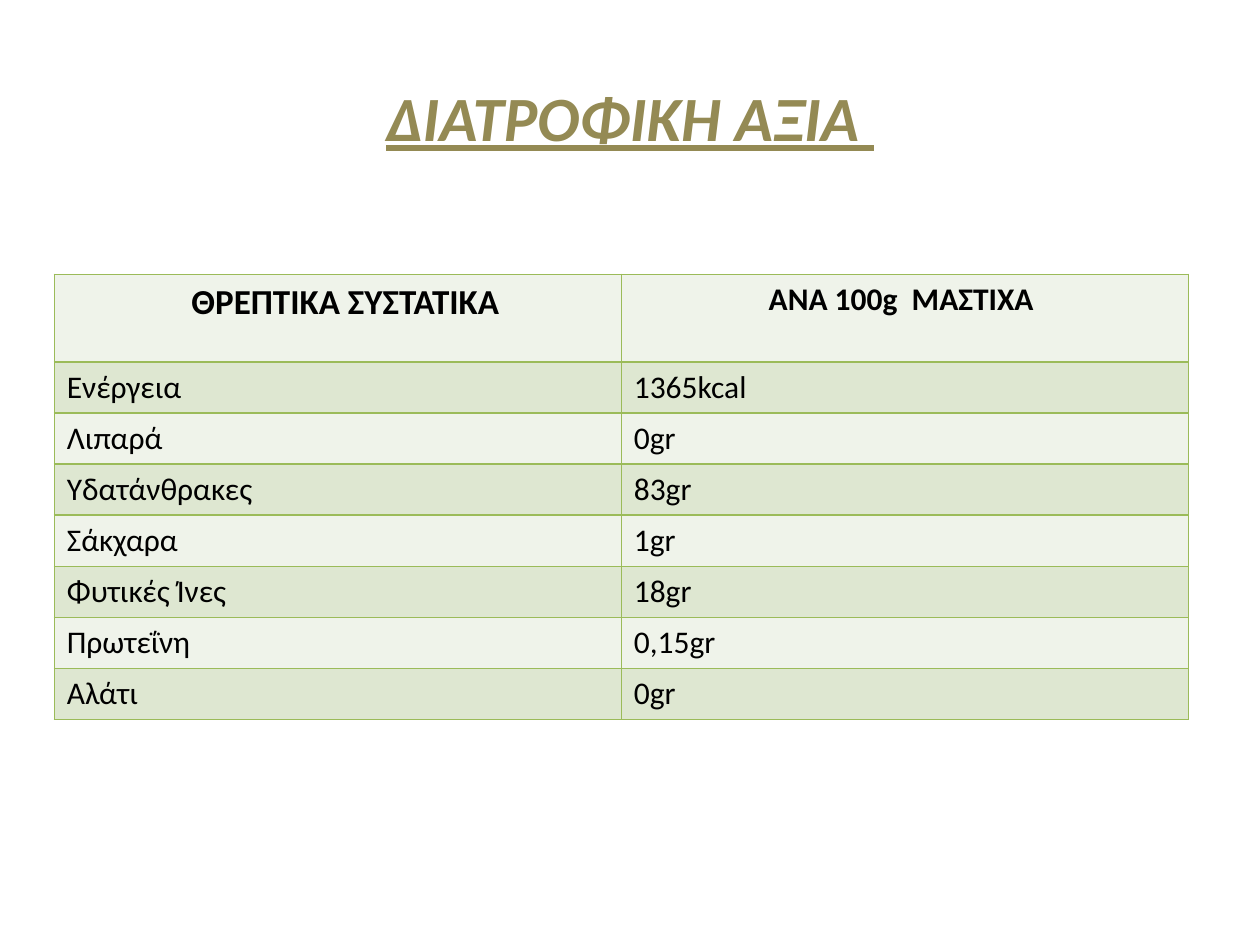
import pptx
import pptx.util
import pptx.dml.color
import pptx.enum.text
import pptx.oxml
import pptx.oxml.ns

Pt = pptx.util.Pt
RGBColor = pptx.dml.color.RGBColor
ALIGN = pptx.enum.text.PP_ALIGN
ANCHOR = pptx.enum.text.MSO_ANCHOR

# Content
TITLE = "ΔΙΑΤΡΟΦΙΚΗ ΑΞΙΑ "
ROWS = [
    ("ΘΡΕΠΤΙΚΑ ΣΥΣΤΑΤΙΚΑ", "ΑΝΑ 100g  ΜΑΣΤΙΧΑ "),
    ("Ενέργεια", "1365kcal"),
    ("Λιπαρά", "0gr"),
    ("Υδατάνθρακες", "83gr"),
    ("Σάκχαρα", "1gr"),
    ("Φυτικές Ίνες", "18gr"),
    ("Πρωτεΐνη", "0,15gr"),
    ("Αλάτι", "0gr"),
]

# Style
FONT = "Calibri"
OLIVE = RGBColor(0x94, 0x8A, 0x54)
BLACK = RGBColor(0x00, 0x00, 0x00)
GREEN = RGBColor(0x9B, 0xBB, 0x59)
BANDS = [RGBColor(0xEF, 0xF3, 0xEA), RGBColor(0xDE, 0xE7, 0xD1)]
HEADER_SIZES = [20, 18]
BODY_SIZE = 18
COLUMN_WIDTH = 324
HEADER_HEIGHT = 50
ROW_HEIGHT = 29.2


def style_paragraph(paragraph, size, color, bold):
    paragraph.font.name = FONT
    paragraph.font.size = Pt(size)
    paragraph.font.bold = bold
    paragraph.font.color.rgb = color


def add_borders(cell):
    properties = cell._tc.get_or_add_tcPr()
    for position, side in enumerate(("lnL", "lnR", "lnT", "lnB")):
        properties.insert(position, pptx.oxml.parse_xml(
            f'<a:{side} {pptx.oxml.ns.nsdecls("a")} w="{Pt(1)}"><a:solidFill>'
            f'<a:srgbClr val="{GREEN}"/></a:solidFill></a:{side}>'))


presentation = pptx.Presentation()
presentation.slide_width = Pt(720)
presentation.slide_height = Pt(540)
slide = presentation.slides.add_slide(presentation.slide_layouts[6])

# Title
title = slide.shapes.add_textbox(Pt(36), Pt(21.6), Pt(648), Pt(90))
title.text_frame.word_wrap = True
title.text_frame.vertical_anchor = ANCHOR.MIDDLE
paragraph = title.text_frame.paragraphs[0]
paragraph.text = TITLE
paragraph.alignment = ALIGN.CENTER
style_paragraph(paragraph, 36, OLIVE, True)
paragraph.font.italic = True
paragraph.font.underline = True

# Nutrition table
heights = [HEADER_HEIGHT] + [ROW_HEIGHT] * (len(ROWS) - 1)
table = slide.shapes.add_table(
    len(ROWS), 2, Pt(31), Pt(156.8), Pt(2 * COLUMN_WIDTH), Pt(sum(heights))).table
for column in table.columns:
    column.width = Pt(COLUMN_WIDTH)

for row_index, texts in enumerate(ROWS):
    table.rows[row_index].height = Pt(heights[row_index])
    is_header = row_index == 0
    for column_index, text in enumerate(texts):
        cell = table.cell(row_index, column_index)
        cell.fill.solid()
        cell.fill.fore_color.rgb = BANDS[row_index % 2]
        add_borders(cell)
        paragraph = cell.text_frame.paragraphs[0]
        paragraph.text = text
        paragraph.alignment = ALIGN.CENTER if is_header else ALIGN.LEFT
        size = HEADER_SIZES[column_index] if is_header else BODY_SIZE
        style_paragraph(paragraph, size, BLACK, is_header)

# The first heading sits slightly right of centre
table.cell(0, 0).margin_left = Pt(16)

presentation.save("out.pptx")
